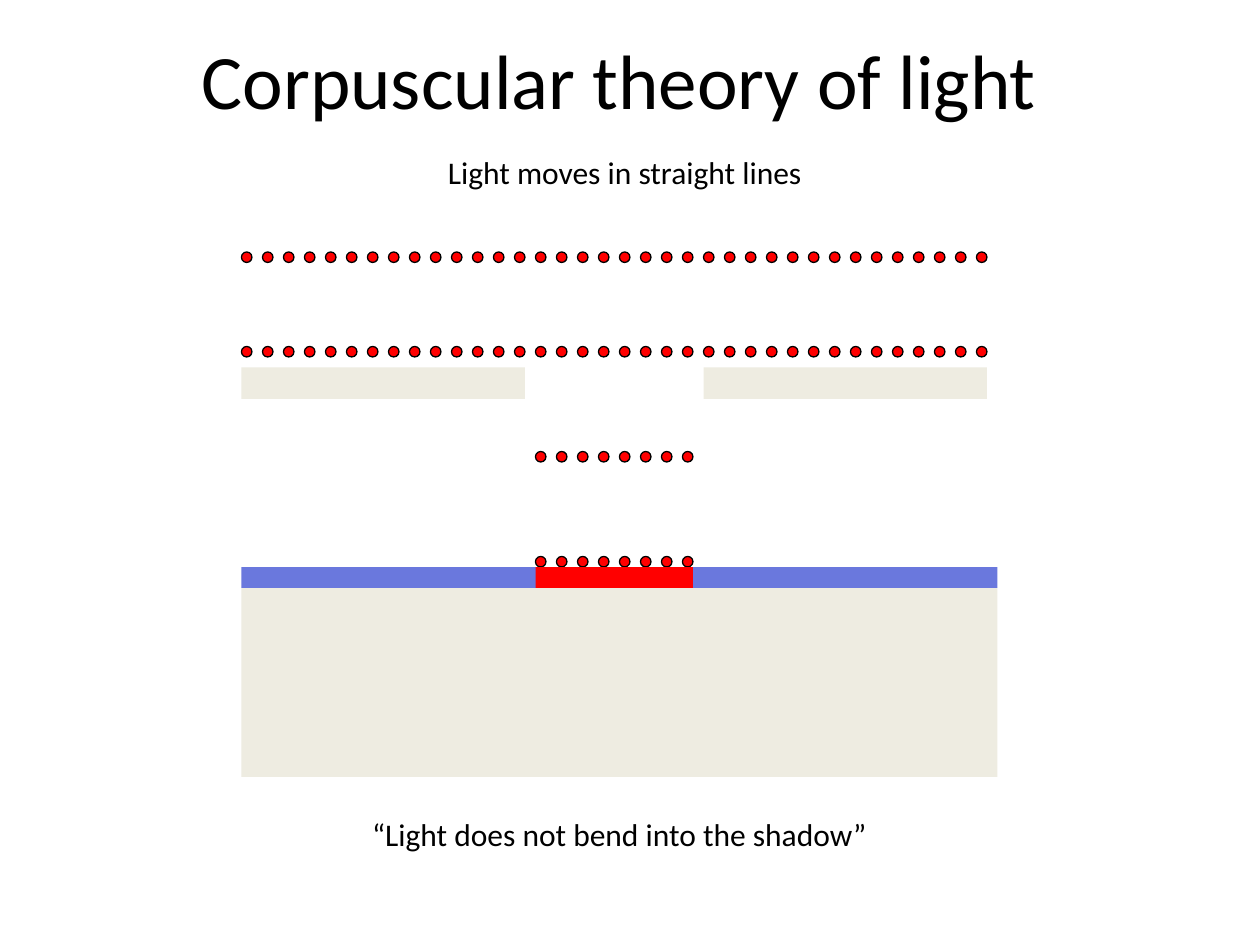
from pptx import Presentation
from pptx.dml.color import RGBColor
from pptx.enum import shapes, text
from pptx.util import Pt

BLACK = RGBColor(0x00, 0x00, 0x00)
RED = RGBColor(0xFF, 0x00, 0x00)
BLUE = RGBColor(0x6A, 0x78, 0xDD)
BEIGE = RGBColor(0xEE, 0xEC, 0xE1)

FONT = "Calibri"
LEFT = 138
DOT = 6
PITCH = 12
SLIT_LEFT = LEFT + 14 * PITCH


def add_text(slide, words, left, top, width, height, size, anchor):
    box = slide.shapes.add_textbox(Pt(left), Pt(top), Pt(width), Pt(height))
    tf = box.text_frame
    tf.word_wrap = True
    tf.vertical_anchor = anchor
    tf.text = words
    p = tf.paragraphs[0]
    p.alignment = text.PP_ALIGN.CENTER
    font = p.runs[0].font
    font.name, font.size = FONT, Pt(size)
    font.color.rgb = BLACK


def add_bar(slide, left, top, width, height, color):
    sp = slide.shapes.add_shape(shapes.MSO_SHAPE.RECTANGLE,
                                Pt(left), Pt(top), Pt(width), Pt(height))
    sp.shadow.inherit = False
    sp.fill.solid()
    sp.fill.fore_color.rgb = color
    sp.line.fill.background()


def add_wavefront(slide, left, top, count):
    """Add a grouped row of evenly spaced light particles."""
    group = slide.shapes.add_group_shape()
    for i in range(count):
        sp = group.shapes.add_shape(shapes.MSO_SHAPE.OVAL, Pt(left + i * PITCH),
                                    Pt(top), Pt(DOT), Pt(DOT))
        sp.shadow.inherit = False
        sp.fill.solid()
        sp.fill.fore_color.rgb = RED
        sp.line.color.rgb = BLACK
        sp.line.width = Pt(0.75)


def main():
    prs = Presentation()
    prs.slide_width, prs.slide_height = Pt(720), Pt(540)
    slide = prs.slides.add_slide(prs.slide_layouts[6])

    add_text(slide, "Corpuscular theory of light", 48, 12, 612, 66, 44,
             text.MSO_ANCHOR.MIDDLE)

    for left in (LEFT, 402):
        add_bar(slide, left, 210, 162, 18, BEIGE)
    add_bar(slide, LEFT, 336, 432, 108, BEIGE)
    add_bar(slide, LEFT, 324, 432, 12, BLUE)

    for top in (144, 198):
        add_wavefront(slide, LEFT, top, 36)
    for top in (258, 318):
        add_wavefront(slide, SLIT_LEFT, top, 8)
    add_bar(slide, SLIT_LEFT, 324, 90, 12, RED)

    add_text(slide, "“Light does not bend into the shadow”", 126, 462, 456, 36, 18,
             text.MSO_ANCHOR.TOP)
    add_text(slide, "Light moves in straight lines", 132, 84, 450, 36, 18,
             text.MSO_ANCHOR.TOP)

    prs.save("out.pptx")


if __name__ == "__main__":
    main()
